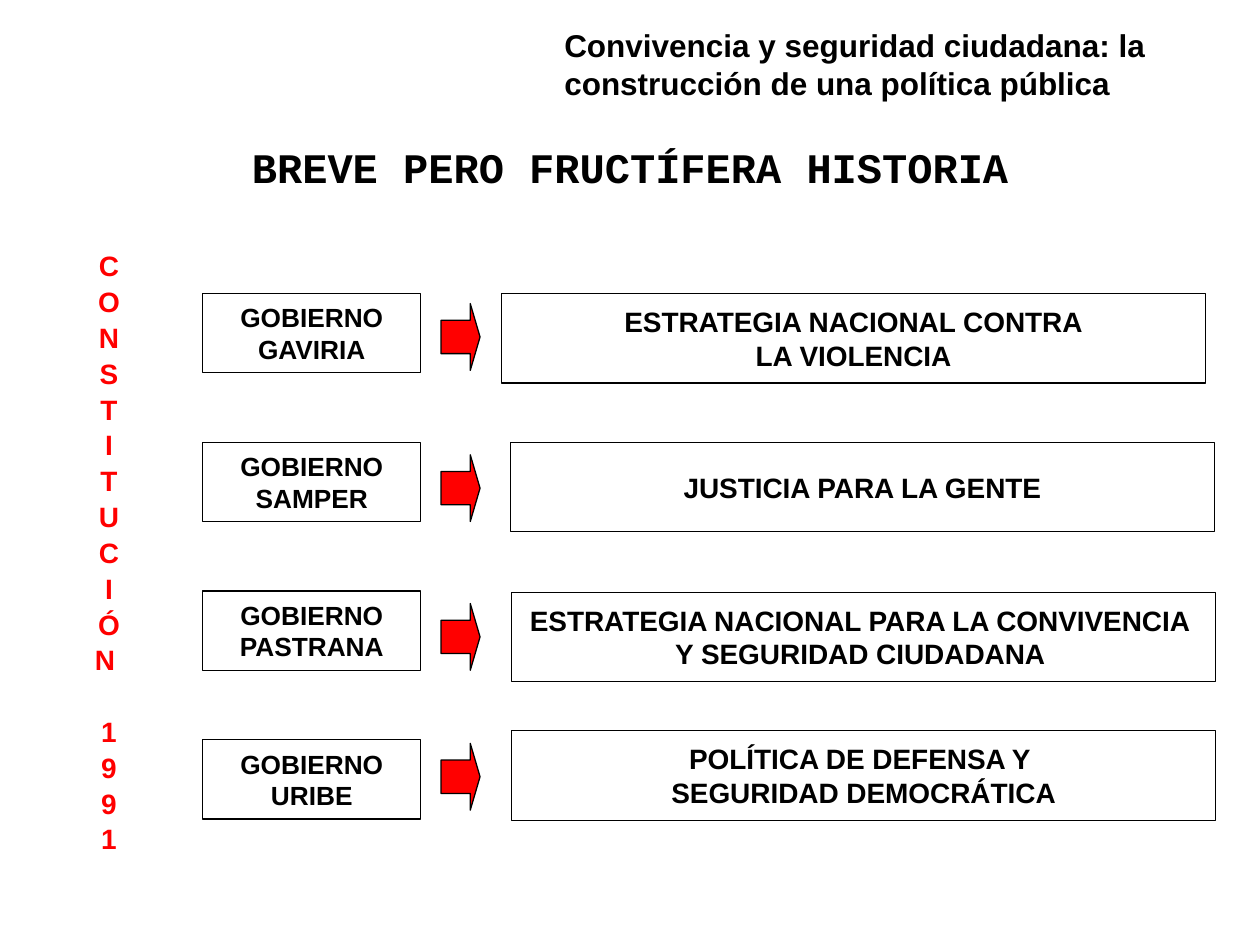
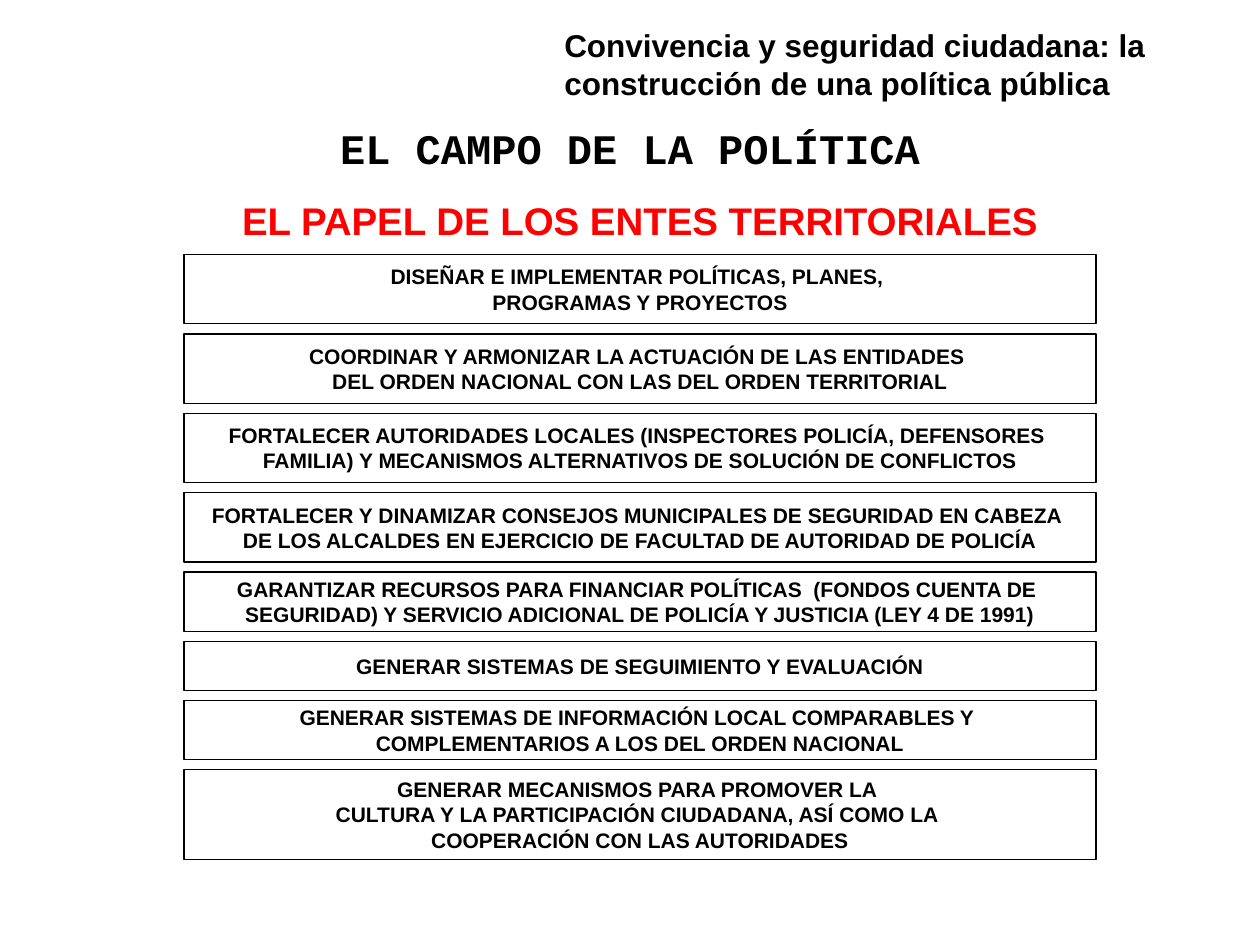
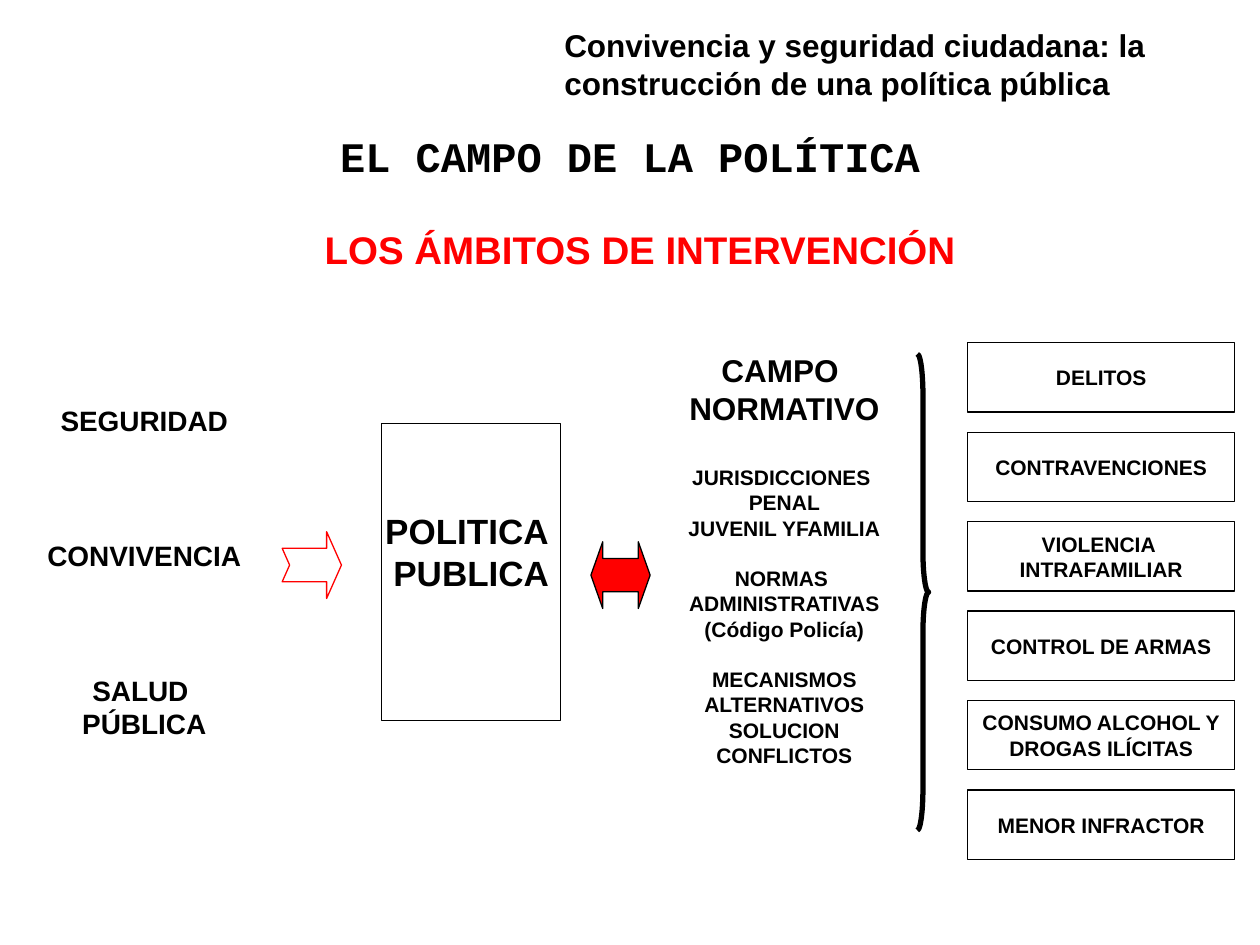
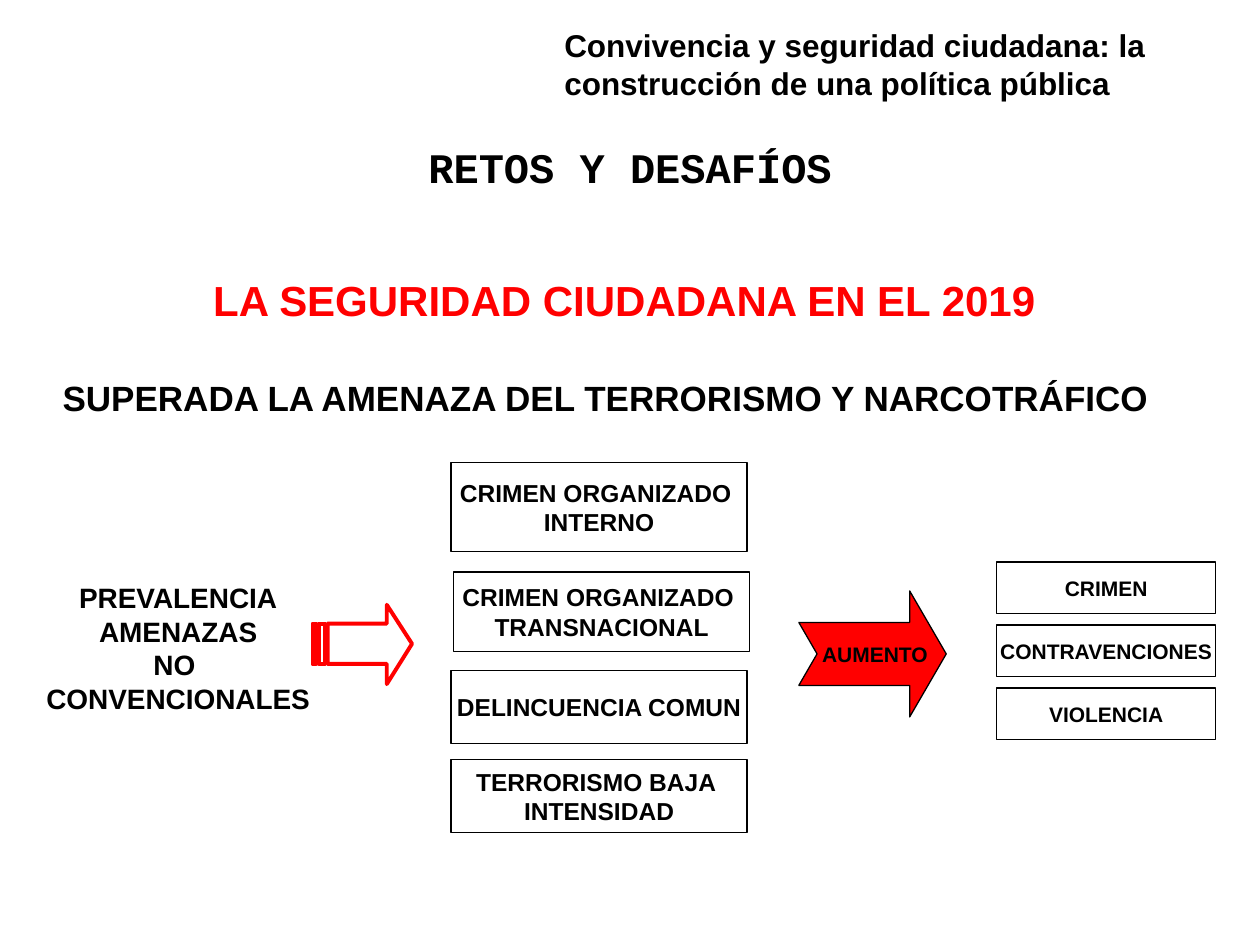
from pptx import Presentation
from pptx.dml.color import RGBColor
from pptx.enum.shapes import MSO_SHAPE
from pptx.enum.text import MSO_ANCHOR, PP_ALIGN
from pptx.util import Inches, Pt

RECT = MSO_SHAPE.RECTANGLE
RIGHT_ARROW = MSO_SHAPE.RIGHT_ARROW
NOTCHED_ARROW = MSO_SHAPE.NOTCHED_RIGHT_ARROW
DOUBLE_ARROW = MSO_SHAPE.LEFT_RIGHT_ARROW
BRACE = MSO_SHAPE.RIGHT_BRACE
TOP, MIDDLE = MSO_ANCHOR.TOP, MSO_ANCHOR.MIDDLE
LEFT, CENTER = PP_ALIGN.LEFT, PP_ALIGN.CENTER

BLACK, RED = "000000", "FF0000"
BODY_FONT, TITLE_FONT = "Arial", "Courier New"
HEADER = "Convivencia y seguridad ciudadana: la construcción de una política pública"


def rgb(value):
    return RGBColor.from_string(value)


def write(frame, lines, size, color=BLACK, font=BODY_FONT, align=CENTER,
          anchor=MIDDLE, wrap=False, gaps=None, sizes=None):
    """Write one paragraph per line; gaps and sizes override by line index."""
    frame.word_wrap = wrap
    frame.vertical_anchor = anchor
    for i, line in enumerate(lines):
        paragraph = frame.paragraphs[0] if i == 0 else frame.add_paragraph()
        paragraph.alignment = align
        if gaps and i in gaps:
            paragraph.space_before = Pt(gaps[i])
        run = paragraph.add_run()
        run.text = line
        run.font.size = Pt(sizes[i] if sizes else size)
        run.font.bold = True
        run.font.name = font
        run.font.color.rgb = rgb(color)


def label(slide, at, lines, size, **style):
    frame = slide.shapes.add_textbox(*map(Inches, at)).text_frame
    write(frame, lines, size, **style)
    if not frame.word_wrap:
        # Full width for text that must stay on its own line
        frame.margin_left = frame.margin_right = 0
    return frame


def paint(shape, fill, line, width):
    shape.shadow.inherit = False
    if fill:
        shape.fill.solid()
        shape.fill.fore_color.rgb = rgb(fill)
    else:
        shape.fill.background()
    shape.line.color.rgb = rgb(line)
    shape.line.width = Pt(width)


def figure(slide, kind, at, adjustments=(), fill=None, line=BLACK, width=0.75):
    shape = slide.shapes.add_shape(kind, *map(Inches, at))
    for i, value in enumerate(adjustments):
        shape.adjustments[i] = value
    paint(shape, fill, line, width)
    return shape


def box(slide, at, lines, size):
    frame = figure(slide, RECT, at).text_frame
    write(frame, lines, size)
    return frame


def striped_arrow(slide, contours):
    builder = None
    for contour in contours:
        points = [(Inches(x), Inches(y)) for x, y in contour]
        if builder is None:
            builder = slide.shapes.build_freeform(*points[0])
        else:
            builder.move_to(*points[0])
        builder.add_line_segments(points[1:], close=True)
    paint(builder.convert_to_shape(), None, RED, 2.25)


def stripe(left, right, top, bottom):
    return [(left, top), (left, bottom), (right, bottom), (right, top)]


def new_slide(prs, title, title_top):
    slide = prs.slides.add_slide(prs.slide_layouts[6])
    label(slide, (0.5, title_top, 9, 0.48), [title], 24, font=TITLE_FONT,
          anchor=TOP, wrap=True)
    label(slide, (4.38, 0.16, 5.35, 0.68), [HEADER], 18, align=LEFT,
          anchor=TOP, wrap=True)
    return slide


def history_slide(prs):
    slide = new_slide(prs, "BREVE PERO FRUCTÍFERA HISTORIA", 1.07)

    # Constitution, read downwards
    letters = list("CONSTITUCIÓ") + ["N "] + list("1991")
    spacing = {i: 3.2 for i in range(1, len(letters))}
    spacing[12] = 23.7
    constitution = label(slide, (0.51, 1.72, 0.71, 5.36), letters, 16,
                         color=RED, gaps=spacing)
    for paragraph in constitution.paragraphs:
        paragraph.line_spacing = 0.9

    # Governments and their policies
    governments = [
        ("GAVIRIA", 2.41, 3.98, 2.33,
         ["ESTRATEGIA NACIONAL CONTRA", "LA VIOLENCIA"]),
        ("SAMPER", 3.61, 4.05, 3.51, ["JUSTICIA PARA LA GENTE"]),
        ("PASTRANA", 4.79, 4.06, 4.7,
         ["ESTRATEGIA NACIONAL PARA LA CONVIVENCIA ", "Y SEGURIDAD CIUDADANA "]),
        ("URIBE", 5.9, 4.06, 5.8,
         ["POLÍTICA DE DEFENSA Y ", "SEGURIDAD DEMOCRÁTICA"]),
    ]
    for i, (name, arrow_top, left, top, policy) in enumerate(governments):
        box(slide, (1.61, 2.33 + 1.18 * i, 1.73, 0.63), ["GOBIERNO", name], 15)
        figure(slide, RIGHT_ARROW, (3.5, arrow_top, 0.31, 0.53), (0.5, 0.25), RED)
        box(slide, (left, top, 5.59, 0.71), policy, 16)


def territories_slide(prs):
    slide = new_slide(prs, "EL CAMPO DE LA POLÍTICA", 0.92)
    label(slide, (1.85, 1.47, 6.46, 0.55),
          ["EL PAPEL DE LOS ENTES TERRITORIALES"], 22, color=RED)

    # Stack of duties
    duties = [
        (0.55, ["DISEÑAR E IMPLEMENTAR POLÍTICAS, PLANES, ",
                "PROGRAMAS Y PROYECTOS"]),
        (0.55, ["COORDINAR Y ARMONIZAR LA ACTUACIÓN DE LAS ENTIDADES ",
                "DEL ORDEN NACIONAL CON LAS DEL ORDEN TERRITORIAL"]),
        (0.55, ["FORTALECER AUTORIDADES LOCALES (INSPECTORES POLICÍA, DEFENSORES ",
                "FAMILIA) Y MECANISMOS ALTERNATIVOS DE SOLUCIÓN DE CONFLICTOS"]),
        (0.55, ["FORTALECER Y DINAMIZAR CONSEJOS MUNICIPALES DE SEGURIDAD EN CABEZA ",
                "DE LOS ALCALDES EN EJERCICIO DE FACULTAD DE AUTORIDAD DE POLICÍA"]),
        (0.47, ["GARANTIZAR RECURSOS PARA FINANCIAR POLÍTICAS  (FONDOS CUENTA DE ",
                "SEGURIDAD) Y SERVICIO ADICIONAL DE POLICÍA Y JUSTICIA (LEY 4 DE 1991)"]),
        (0.39, ["GENERAR SISTEMAS DE SEGUIMIENTO Y EVALUACIÓN"]),
        (0.47, ["GENERAR SISTEMAS DE INFORMACIÓN LOCAL COMPARABLES Y ",
                "COMPLEMENTARIOS A LOS DEL ORDEN NACIONAL"]),
        (0.71, ["GENERAR MECANISMOS PARA PROMOVER LA ",
                "CULTURA Y LA PARTICIPACIÓN CIUDADANA, ASÍ COMO LA ",
                "COOPERACIÓN CON LAS AUTORIDADES"]),
    ]
    top = 2.02
    for height, duty in duties:
        box(slide, (1.46, top, 7.24, height), duty, 12)
        top += height + 0.08


def scope_slide(prs):
    slide = new_slide(prs, "EL CAMPO DE LA POLÍTICA", 0.99)
    label(slide, (1.85, 1.7, 6.46, 0.55),
          ["LOS ÁMBITOS DE INTERVENCIÓN"], 22, color=RED)

    # Areas that feed the policy
    label(slide, (0.2, 2.49, 1.89, 4.1),
          ["SEGURIDAD", "CONVIVENCIA", "SALUD ", "PÚBLICA"], 16,
          gaps={1: 57.8, 2: 57.8})
    figure(slide, NOTCHED_ARROW, (2.24, 4.22, 0.47, 0.53), (0.5, 0.25), line=RED)
    policy = box(slide, (3.03, 3.36, 1.42, 2.36), ["POLITICA ", "PUBLICA"], 20)
    policy.margin_bottom = Inches(0.38)
    figure(slide, DOUBLE_ARROW, (4.69, 4.3, 0.47, 0.53), (0.5, 0.2), RED)

    # Legal field
    norms = ["CAMPO ", "NORMATIVO",
             "JURISDICCIONES ", "PENAL", "JUVENIL YFAMILIA",
             "NORMAS ", "ADMINISTRATIVAS", "(Código Policía)",
             "MECANISMOS", "ALTERNATIVOS", "SOLUCION", "CONFLICTOS"]
    label(slide, (5.32, 2.81, 1.81, 3.26), norms, 12,
          gaps={2: 21.7, 5: 14.5, 8: 14.5}, sizes=[18] * 2 + [12] * 10)
    figure(slide, BRACE, (7.28, 2.81, 0.09, 3.78), (3.63, 0.5), width=3)

    # Matters covered
    matters = [["DELITOS"], ["CONTRAVENCIONES"], ["VIOLENCIA ", "INTRAFAMILIAR"],
               ["CONTROL DE ARMAS"], ["CONSUMO ALCOHOL Y", "DROGAS ILÍCITAS"],
               ["MENOR INFRACTOR"]]
    for i, matter in enumerate(matters):
        box(slide, (7.68, 2.72 + 0.71 * i, 2.12, 0.55), matter, 12)


def challenges_slide(prs):
    slide = new_slide(prs, "RETOS Y DESAFÍOS", 1.07)
    label(slide, (0.27, 2.18, 9.37, 0.39),
          ["LA SEGURIDAD CIUDADANA EN EL 2019"], 24, color=RED)
    label(slide, (0.4, 2.88, 8.81, 0.55),
          ["SUPERADA LA AMENAZA DEL TERRORISMO Y NARCOTRÁFICO"], 20)

    # Threats
    label(slide, (0.3, 4.64, 2.23, 1),
          ["PREVALENCIA", "AMENAZAS", "NO ", "CONVENCIONALES"], 16)
    head = [(3.07, 4.8), (3.07, 4.95), (2.6, 4.95), (2.6, 5.27),
            (3.07, 5.27), (3.07, 5.43), (3.27, 5.11)]
    striped_arrow(slide, [head, stripe(2.53, 2.58, 4.95, 5.27),
                          stripe(2.48, 2.51, 4.95, 5.27)])
    threats = [
        (3.58, 3.67, 0.71, ["CRIMEN ORGANIZADO ", "INTERNO"]),
        (3.6, 4.54, 0.63, ["CRIMEN ORGANIZADO ", "TRANSNACIONAL"]),
        (3.58, 5.32, 0.58, ["DELINCUENCIA COMUN"]),
        (3.58, 6.03, 0.58, ["TERRORISMO BAJA ", "INTENSIDAD"]),
    ]
    for left, top, height, threat in threats:
        box(slide, (left, top, 2.35, height), threat, 14)

    # What increases
    increase = figure(slide, NOTCHED_ARROW, (6.34, 4.69, 1.17, 1), (0.5, 0.29), RED)
    write(increase.text_frame, [" AUMENTO"], 12)
    for i, effect in enumerate(["CRIMEN", "CONTRAVENCIONES", "VIOLENCIA"]):
        box(slide, (7.91, 4.46 + 0.5 * i, 1.74, 0.41), [effect], 12)


def main():
    prs = Presentation()
    prs.slide_width, prs.slide_height = Inches(10), Inches(7.5)
    history_slide(prs)
    territories_slide(prs)
    scope_slide(prs)
    challenges_slide(prs)
    prs.save("out.pptx")


if __name__ == "__main__":
    main()
